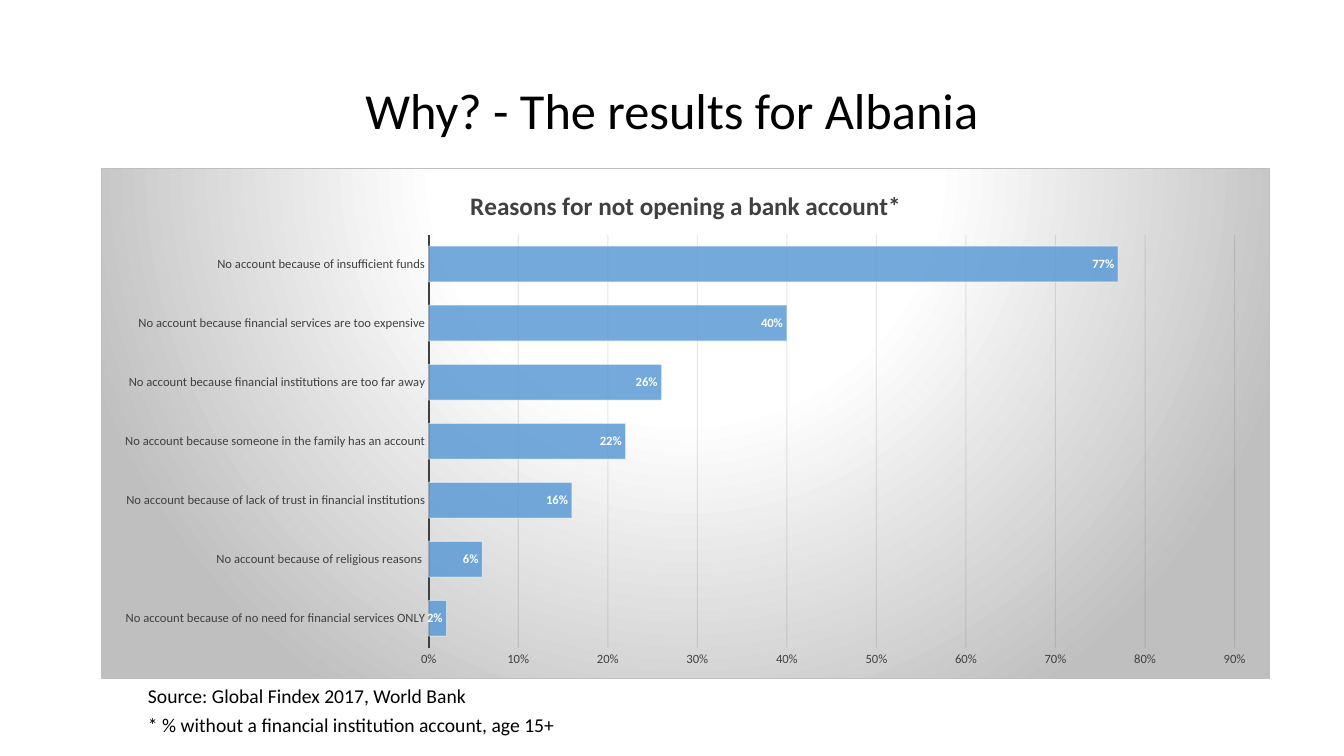
from lxml import etree
from pptx import Presentation
from pptx.chart.data import CategoryChartData
from pptx.dml.color import RGBColor
from pptx.enum import chart as kinds, text
from pptx.oxml import parse_xml
from pptx.util import Cm, Pt

FONT = "Calibri"
GREY = "404040"
NS = ('xmlns:c="http://schemas.openxmlformats.org/drawingml/2006/chart" '
      'xmlns:a="http://schemas.openxmlformats.org/drawingml/2006/main"')
REASONS = [
    ("No account because of no need for financial services ONLY", 0.02),
    ("No account because of religious reasons ", 0.06),
    ("No account because of lack of trust in financial institutions", 0.16),
    ("No account because someone in the family has an account", 0.22),
    ("No account because financial institutions are too far away", 0.26),
    ("No account because financial services are too expensive", 0.4),
    ("No account because of insufficient funds", 0.77),
]


def color(code):
    return RGBColor.from_string(code)


def style(font, size, code, bold=False):
    font.name, font.size, font.bold = FONT, Pt(size), bold
    font.color.rgb = color(code)


def paint(fill, code, alpha=100):
    """Fill with one colour, at an opacity in percent."""
    fill.solid()
    fill.fore_color.rgb = color(code)
    if alpha < 100:
        tint = fill._xPr.find(".//{*}srgbClr")
        etree.SubElement(tint, tint.tag.replace("srgbClr", "alpha"),
                         val=str(alpha * 1000))


def stroke(line, code, width, alpha=100):
    line.width = Pt(width)
    paint(line.fill, code, alpha)


def write(slide, box, words, size, align, space, wrap=False):
    frame = slide.shapes.add_textbox(*map(Cm, box)).text_frame
    frame.word_wrap = wrap
    if wrap:
        frame.vertical_anchor = text.MSO_ANCHOR.MIDDLE
    else:
        frame.auto_size = text.MSO_AUTO_SIZE.SHAPE_TO_FIT_TEXT
    para = frame.paragraphs[0]
    para.alignment, para.line_spacing = align, space
    run = para.add_run()
    run.text = words
    style(run.font, size, "000000")


def back(chart):
    """Give the chart area its radial gradient and border, and place the plot."""
    stops = "".join(f'<a:gs pos="{pos * 1000}"><a:srgbClr val="{code}"/></a:gs>'
                    for pos, code in ((0, "FFFFFF"), (39, "FFFFFF"), (100, "BFBFBF")))
    root = chart._chartSpace
    root.find("{*}chart").addnext(parse_xml(
        f'<c:spPr {NS}><a:gradFill><a:gsLst>{stops}</a:gsLst><a:path path="circle">'
        '<a:fillToRect l="50000" t="-80000" r="50000" b="180000"/></a:path></a:gradFill>'
        '<a:ln w="9525"><a:solidFill><a:srgbClr val="BFBFBF"/></a:solidFill></a:ln></c:spPr>'))
    plot = root.find(".//{*}plotArea")
    for old in plot.findall("{*}layout"):
        plot.remove(old)
    sides = "".join(f'<c:{key} val="{val}"/>' for key, val in (
        ("layoutTarget", "inner"), ("xMode", "edge"), ("yMode", "edge"),
        ("x", 0.28), ("y", 0.13), ("w", 0.69), ("h", 0.81)))
    plot.insert(0, parse_xml(
        f'<c:layout {NS}><c:manualLayout>{sides}</c:manualLayout></c:layout>'))


def bars(slide, box):
    data = CategoryChartData(number_format="0%")
    data.categories = [name for name, share in REASONS]
    data.add_series("Series 1", [share for name, share in REASONS])
    chart = slide.shapes.add_chart(
        kinds.XL_CHART_TYPE.BAR_CLUSTERED, *map(Cm, box), data).chart
    style(chart.font, 10, "000000")
    chart.has_legend = False
    run = chart.chart_title.text_frame.paragraphs[0].add_run()
    run.text = "Reasons for not opening a bank account*"
    style(run.font, 18, GREY, True)
    chart.chart_title.include_in_layout = False

    cats, vals = chart.category_axis, chart.value_axis
    for axis in (cats, vals):
        axis.major_tick_mark = axis.minor_tick_mark = kinds.XL_TICK_MARK.NONE
        style(axis.tick_labels.font, 9, GREY)
    cats.has_major_gridlines = False
    stroke(cats.format.line, GREY, 1.5)
    vals.minimum_scale, vals.maximum_scale, vals.major_unit = 0, 0.9, 0.1
    vals.tick_labels.number_format = "0%"
    vals.tick_labels.number_format_is_linked = False
    vals.format.line.fill.background()
    stroke(vals.major_gridlines.format.line, "0D0D0D", 0.75, 10)

    plot = chart.plots[0]
    plot.gap_width, plot.vary_by_categories = 65, False
    row = plot.series[0]
    paint(row.format.fill, "5B9BD5", 85)
    stroke(row.format.line, "FFFFFF", 0.75, 50)
    tags = row.data_labels
    tags.show_value = True
    tags.position = kinds.XL_LABEL_POSITION.INSIDE_END
    tags.number_format, tags.number_format_is_linked = "0%", False
    style(tags.font, 9, "FFFFFF", True)
    back(chart)


def notes(slide, box):
    left, top, width, step = box
    lines = [("Source: Global Findex 2017, World Bank", text.PP_ALIGN.JUSTIFY, 8.6),
             ("* % without a financial institution account, age 15+",
              text.PP_ALIGN.LEFT, width)]
    for row, (words, align, wide) in enumerate(lines):
        write(slide, (left, top + row * step, wide, 0.89), words, 14, align, 1.07)


def main():
    deck = Presentation()
    deck.slide_width, deck.slide_height = Cm(33.87), Cm(19.05)
    slide = deck.slides.add_slide(deck.slide_layouts[6])
    write(slide, (2.33, 1.02, 29.21, 3.68), "Why? - The results for Albania",
          36, text.PP_ALIGN.CENTER, 0.9, True)
    bars(slide, (2.55, 4.23, 29.46, 12.88))
    notes(slide, (3.48, 17.07, 10.87, 0.74))
    deck.save("out.pptx")


if __name__ == "__main__":
    main()
